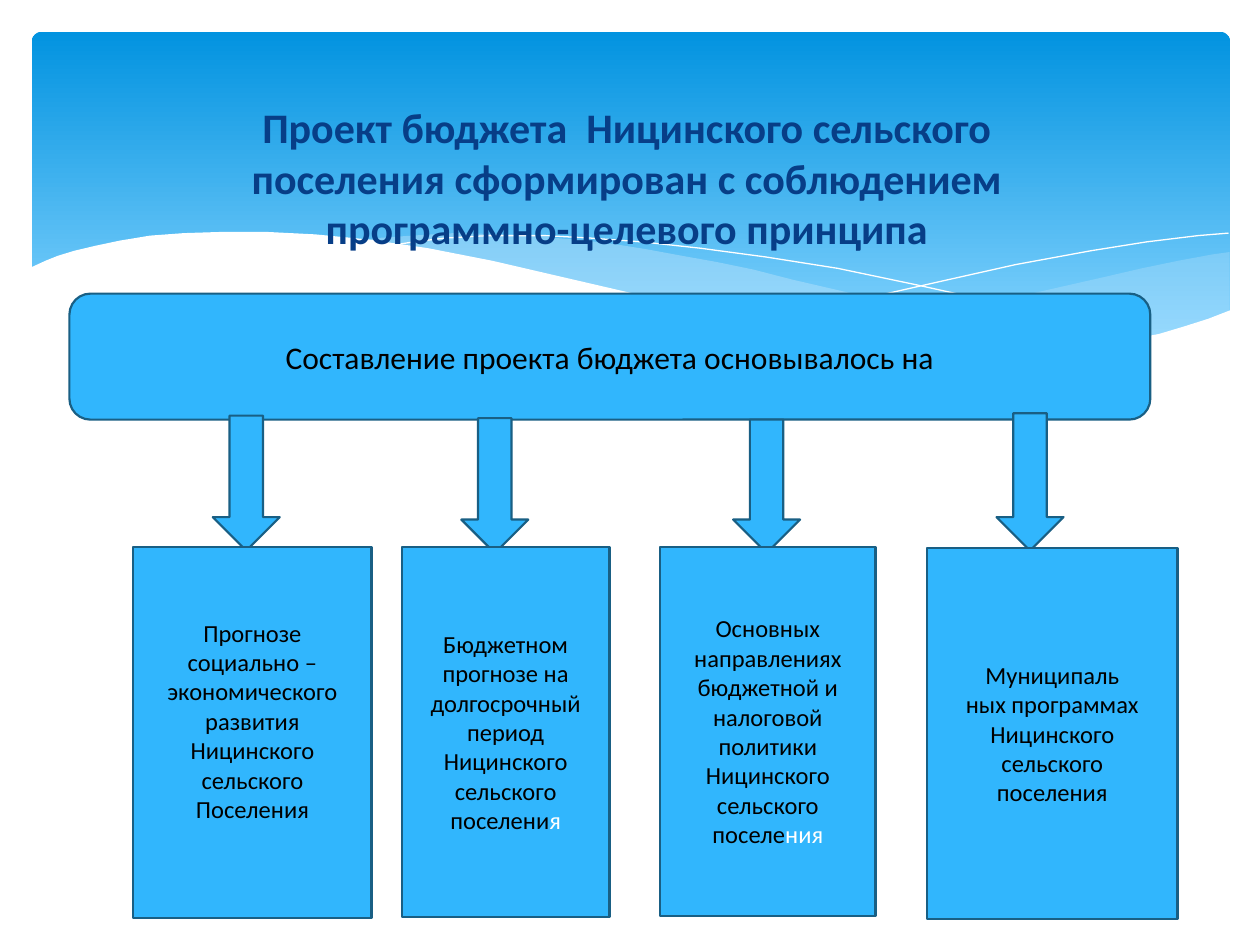
from lxml.etree import SubElement
from pptx import Presentation
from pptx.dml.color import RGBColor
from pptx.enum.shapes import MSO_SHAPE as Preset
from pptx.enum.text import MSO_ANCHOR as Anchor, PP_ALIGN as Align
from pptx.oxml.ns import qn
from pptx.util import Cm, Pt

FONT = "Calibri"
WHITE = RGBColor(0xFF, 0xFF, 0xFF)
BLACK = RGBColor(0, 0, 0)
NAVY = RGBColor(0x07, 0x3E, 0x87)
SKY = RGBColor(0x31, 0xB6, 0xFD)
EDGE = RGBColor(0x19, 0x5F, 0x84)
MIST = RGBColor(0xC6, 0xE7, 0xFC)
PANEL_TOP = RGBColor(0x02, 0x93, 0xE0)
PANEL_BOTTOM = RGBColor(0x83, 0xD3, 0xFE)

WAVE_UNIT = Cm(0.0254)
RIGHT_WAVE = [
    (976, 200), (962, 202), (935, 207), (906, 213), (876, 220), (832, 230),
    (779, 242), (729, 253), (683, 262), (661, 265), (691, 269), (719, 271),
    (745, 275), (769, 277), (803, 278), (835, 277), (863, 275), (889, 272),
    (913, 267), (935, 262), (949, 257), (963, 252), (976, 247),
]
MIDDLE_WAVE = [
    (893, 273), (866, 269), (837, 265), (807, 260), (775, 254), (741, 247),
    (706, 240), (668, 231), (629, 222), (598, 214), (569, 208), (541, 203),
    (514, 198), (489, 194), (465, 191), (442, 189), (420, 187), (399, 186),
    (361, 185), (328, 187), (299, 189), (286, 191), (323, 196), (362, 203),
    (404, 211), (449, 222), (491, 232), (530, 240), (566, 248), (601, 255),
    (634, 261), (665, 266), (695, 270), (722, 274), (748, 276), (785, 278),
    (828, 278), (857, 277), (876, 275), (893, 273),
]
FALLING_LINE = [
    (309, 195), (328, 192), (353, 189), (387, 187), (433, 187), (469, 189),
    (510, 192), (556, 197), (608, 204), (665, 213), (727, 226), (795, 241),
    (869, 261), (907, 272),
]
RISING_LINE = [
    (613, 257), (653, 246), (695, 235), (748, 223), (806, 210), (866, 199),
    (910, 192), (951, 187), (975, 185),
]
WHITE_WAVE = [
    (977, 246), (959, 253), (940, 259), (920, 265), (899, 269), (875, 273),
    (850, 275), (823, 277), (793, 276), (761, 275), (726, 272), (688, 268),
    (648, 262), (603, 254), (555, 245), (503, 233), (447, 220), (391, 207),
    (340, 197), (292, 190), (250, 186), (211, 184), (177, 184), (146, 185),
    (119, 187), (95, 191), (76, 195), (59, 199), (46, 203), (36, 207),
    (23, 213), (23, 329), (977, 329),
]

ARROWS = [
    (4.29, 8.38, 2.72),
    (9.3, 8.43, 2.72),
    (14.78, 8.46, 2.69),
    (20.09, 8.33, 2.77),
]
BASES = [
    (2.69, 11.02, 4.8, 7.49, 0.6,
     ["Прогнозе", "социально –", "экономического", "развития",
      "Ницинского", "сельского", "Поселения"], ""),
    (8.1, 11.02, 4.19, 7.47, 0.13,
     ["Бюджетном", "прогнозе на", "долгосрочный", "период",
      "Ницинского", "сельского", "поселени"], "я"),
    (13.31, 11.02, 4.34, 7.44, 0.13,
     ["Основных", "направлениях", "бюджетной и", "налоговой", "политики",
      "Ницинского", "сельского", "поселе"], "ния"),
    (18.69, 11.05, 5.05, 7.47, 0.13,
     ["Муниципаль", "ных программах", "Ницинского", "сельского",
      "поселения"], ""),
]


def add_span(para, text, size, color, bold=False):
    """Append one styled run to a paragraph."""
    span = para.add_run()
    span.text = text
    span.font.name = FONT
    span.font.size = Pt(size)
    span.font.bold = bold
    span.font.color.rgb = color


def add_panel(page):
    """Add the rounded gradient panel behind the title."""
    panel = page.shapes.add_shape(
        Preset.ROUNDED_RECTANGLE, Cm(0.64), Cm(0.64), Cm(24.16), Cm(6.86))
    panel.adjustments[0] = 0.03
    panel.shadow.inherit = False
    panel.line.fill.background()
    panel.fill.gradient()
    panel.fill.gradient_angle = 270
    colors = (PANEL_TOP, PANEL_BOTTOM)
    for stop, position, color in zip(panel.fill.gradient_stops, (0, 0.9), colors):
        stop.position = position
        stop.color.rgb = color


def add_wave(page, points, color, opacity=100, closed=True):
    """Add a filled wave, or a thin curve when it is not closed."""
    builder = page.shapes.build_freeform(*points[0], scale=WAVE_UNIT)
    builder.add_line_segments(points[1:], close=closed)
    wave = builder.convert_to_shape()
    wave.shadow.inherit = False
    if not closed:
        wave.fill.background()
        wave.line.color.rgb = color
        wave.line.width = Pt(0)
        return
    wave.line.fill.background()
    wave.fill.solid()
    wave.fill.fore_color.rgb = color
    if opacity < 100:
        tone = wave._element.spPr.find(qn("a:solidFill")).find(qn("a:srgbClr"))
        SubElement(tone, qn("a:alpha")).set("val", str(opacity * 1000))


def add_title(page, text):
    """Add the centred slide title."""
    box = page.shapes.add_textbox(Cm(3.68), Cm(1.93), Cm(17.78), Cm(3.4))
    frame = box.text_frame
    frame.word_wrap = True
    frame.margin_left = Cm(0.38)
    para = frame.paragraphs[0]
    para.alignment = Align.CENTER
    add_span(para, text, 24, NAVY, bold=True)


def add_block(page, preset, left, top, width, height):
    """Add an outlined sky-blue preset shape."""
    block = page.shapes.add_shape(
        preset, Cm(left), Cm(top), Cm(width), Cm(height))
    block.shadow.inherit = False
    block.fill.solid()
    block.fill.fore_color.rgb = SKY
    block.line.color.rgb = EDGE
    block.line.width = Pt(1.25)
    return block


def write_lines(block, lines, size, white_tail=""):
    """Write centred lines in a block, the last one ending in white."""
    frame = block.text_frame
    frame.word_wrap = True
    frame.vertical_anchor = Anchor.MIDDLE
    for index, line in enumerate(lines):
        para = frame.add_paragraph() if index else frame.paragraphs[0]
        para.alignment = Align.CENTER
        add_span(para, line, size, BLACK)
    if white_tail:
        add_span(para, white_tail, size, WHITE)


def main():
    """Build the slide and save the deck."""
    deck = Presentation()
    deck.slide_width, deck.slide_height = Cm(25.4), Cm(19.05)
    page = deck.slides.add_slide(deck.slide_layouts[6])

    add_panel(page)
    add_wave(page, RIGHT_WAVE, MIST, opacity=29)
    add_wave(page, MIDDLE_WAVE, MIST, opacity=40)
    add_wave(page, FALLING_LINE, WHITE, closed=False)
    add_wave(page, RISING_LINE, WHITE, closed=False)
    add_wave(page, WHITE_WAVE, WHITE)

    add_title(page, "Проект бюджета  Ницинского сельского поселения "
                    "сформирован с соблюдением программно-целевого принципа")
    header = add_block(page, Preset.ROUNDED_RECTANGLE, 1.4, 5.92, 21.79, 2.54)
    write_lines(header, ["Составление проекта бюджета основывалось на"], 18)

    for left, top, height in ARROWS:
        add_block(page, Preset.DOWN_ARROW, left, top, 1.35, height)
    for left, top, width, height, bottom_margin, lines, white_tail in BASES:
        base = add_block(page, Preset.RECTANGLE, left, top, width, height)
        base.text_frame.margin_bottom = Cm(bottom_margin)
        write_lines(base, lines, 14, white_tail)

    deck.save("out.pptx")


if __name__ == "__main__":
    main()
